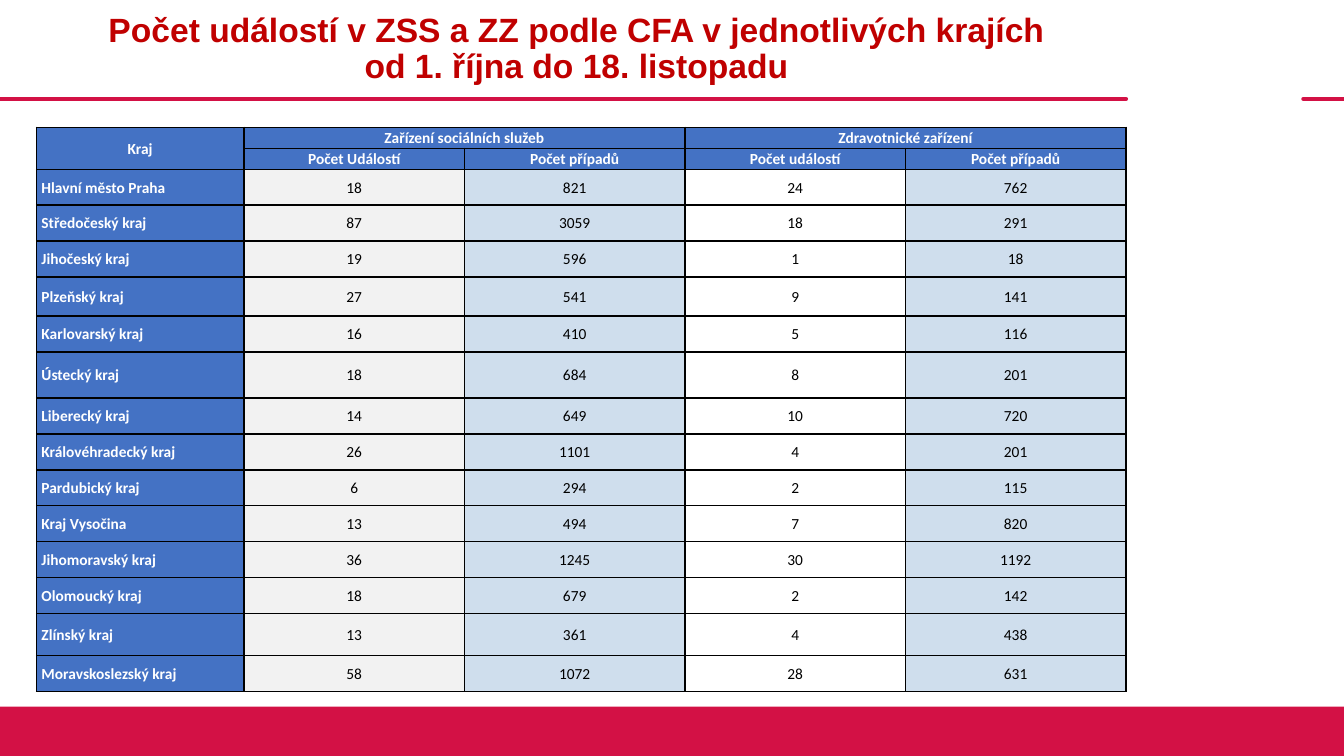
"""Build a slide with a table of outbreak events and cases by region."""
from copy import deepcopy
from lxml import etree
from pptx import Presentation
from pptx import util as u
from pptx.dml.color import RGBColor
from pptx.enum import shapes, text
from pptx.oxml.ns import qn

TITLE = ("Počet událostí v ZSS a ZZ podle CFA v jednotlivých krajích \v"
         "od 1. října do 18. listopadu ")
HEAD = [
    ("Kraj", "Zařízení sociálních služeb", "", "Zdravotnické zařízení", ""),
    ("", "Počet Událostí", "Počet případů", "Počet událostí", "Počet případů"),
]
DATA = [
    ("Hlavní město Praha", 18, 821, 24, 762),
    ("Středočeský kraj", 87, 3059, 18, 291),
    ("Jihočeský kraj", 19, 596, 1, 18),
    ("Plzeňský kraj", 27, 541, 9, 141),
    ("Karlovarský kraj", 16, 410, 5, 116),
    ("Ústecký kraj", 18, 684, 8, 201),
    ("Liberecký kraj", 14, 649, 10, 720),
    ("Královéhradecký kraj", 26, 1101, 4, 201),
    ("Pardubický kraj", 6, 294, 2, 115),
    ("Kraj Vysočina", 13, 494, 7, 820),
    ("Jihomoravský kraj", 36, 1245, 30, 1192),
    ("Olomoucký kraj", 18, 679, 2, 142),
    ("Zlínský kraj", 13, 361, 4, 438),
    ("Moravskoslezský kraj", 58, 1072, 28, 631),
]
HEX = {"red": "D31145", "title": "C00000", "blue": "4472C4", "gray": "F2F2F2",
       "pale": "CFDEED", "white": "FFFFFF", "black": "000000"}
FILLS = ("blue", "gray", "pale", "white", "pale")
MERGES = [((0, 0), (1, 0)), ((0, 1), (0, 2)), ((0, 3), (0, 4))]
TALL = {"Plzeňský kraj": 27.9, "Ústecký kraj": 32.9, "Zlínský kraj": 29.8}
WIDE, HIGH = 960, 540
LEFT, SPAN, TOP = 26, 778.3, 90.8
NAME_W, NUM_W = 148.3, 157.5
HEAD_H, ROW_H = 15, 25.7
RULE_Y, RULES = 70.6, [(0, 804.3), (931, WIDE)]
BAND_Y = 504.7


def rgb(name):
    return RGBColor.from_string(HEX[name])


def put(frame, words, size=11, font="Calibri", color="black", bold=False,
        align="CENTER", gap=1.07):
    para = frame.paragraphs[0]
    para.text = words
    para.alignment = getattr(text.PP_ALIGN, align)
    para.line_spacing = gap
    for run in para.runs:
        run.font.size, run.font.name, run.font.bold = u.Pt(size), font, bold
        run.font.color.rgb = rgb(color)
    for br in para._p.findall(qn("a:br")):
        br.append(deepcopy(para.runs[0]._r.rPr))


def border(cell):
    props = cell._tc.get_or_add_tcPr()
    for side in ("lnL", "lnR", "lnT", "lnB"):
        line = etree.SubElement(props, qn("a:" + side), w=str(u.Pt(1)))
        fill = etree.SubElement(line, qn("a:solidFill"))
        etree.SubElement(fill, qn("a:srgbClr"), val=HEX["black"])


def decorate(slide):
    for start, end in RULES:
        rule = slide.shapes.add_connector(
            shapes.MSO_CONNECTOR.STRAIGHT,
            u.Pt(start), u.Pt(RULE_Y), u.Pt(end), u.Pt(RULE_Y))
        rule.line.color.rgb, rule.line.width = rgb("red"), u.Pt(3)
        rule.line._get_or_add_ln().set("cap", "rnd")
        etree.SubElement(rule._element.spPr, qn("a:effectLst"))
    band = slide.shapes.add_shape(
        shapes.MSO_SHAPE.RECTANGLE,
        0, u.Pt(BAND_Y), u.Pt(WIDE), u.Pt(HIGH - BAND_Y))
    band.shadow.inherit = False
    band.fill.solid()
    band.fill.fore_color.rgb = rgb("red")
    band.line.fill.background()


def add_title(slide):
    title = slide.shapes.title
    title.left, title.top = u.Pt(LEFT), 0
    title.width, title.height = u.Pt(SPAN), u.Pt(RULE_Y)
    frame = title.text_frame
    frame.word_wrap, frame.auto_size = True, text.MSO_AUTO_SIZE.NONE
    frame.vertical_anchor = text.MSO_ANCHOR.MIDDLE
    put(frame, TITLE, size=24, font="Arial", color="title", bold=True, gap=0.9)


def fill_cell(cell, value, row, col):
    head = row < len(HEAD)
    dark = head or col == 0
    cell.margin_left = cell.margin_right = u.Pt(3.6)
    cell.margin_top = cell.margin_bottom = 0
    top = row == 0 and col > 0
    cell.vertical_anchor = text.MSO_ANCHOR.TOP if top else text.MSO_ANCHOR.MIDDLE
    border(cell)
    cell.fill.solid()
    cell.fill.fore_color.rgb = rgb("blue" if head else FILLS[col])
    put(cell.text_frame, str(value), bold=dark,
        color="white" if dark else "black",
        align="LEFT" if col == 0 and not head else "CENTER")


def add_grid(slide):
    rows = HEAD + DATA
    highs = [HEAD_H] * len(HEAD) + [TALL.get(r[0], ROW_H) for r in DATA]
    grid = slide.shapes.add_table(
        len(rows), len(FILLS), u.Pt(LEFT), u.Pt(TOP),
        u.Pt(SPAN), u.Pt(sum(highs))).table
    grid.first_row = grid.horz_banding = False
    for col, part in enumerate(grid.columns):
        part.width = u.Pt(NUM_W if col else NAME_W)
    for r, (row, high) in enumerate(zip(rows, highs)):
        grid.rows[r].height = u.Pt(high)
        for c, value in enumerate(row):
            fill_cell(grid.cell(r, c), value, r, c)
    for first, last in MERGES:
        grid.cell(*first).merge(grid.cell(*last))


def main():
    deck = Presentation()
    deck.slide_width, deck.slide_height = u.Pt(WIDE), u.Pt(HIGH)
    slide = deck.slides.add_slide(deck.slide_layouts[5])
    decorate(slide)
    add_title(slide)
    add_grid(slide)
    deck.save("out.pptx")


if __name__ == "__main__":
    main()
